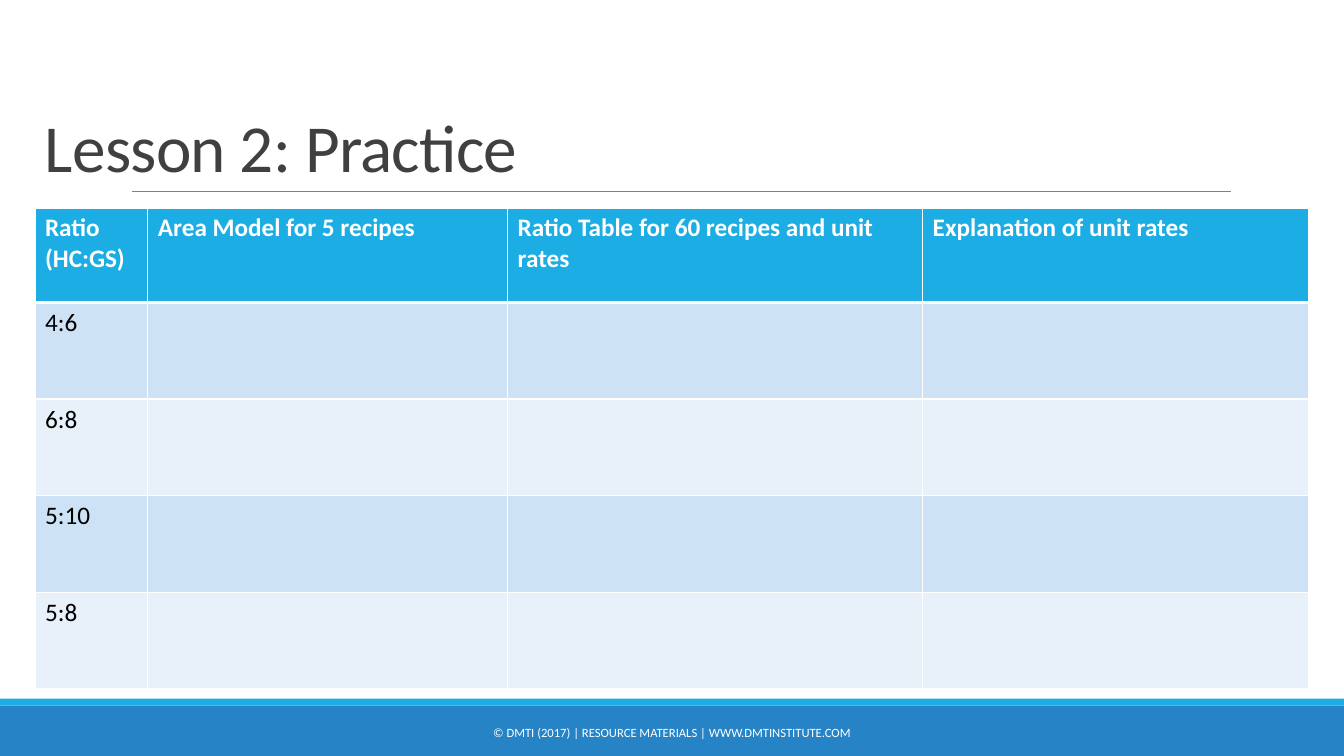
import pptx
import pptx.util
import pptx.dml.color
import pptx.enum.shapes
import pptx.enum.text
import pptx.oxml
import pptx.oxml.ns

Pt = pptx.util.Pt
Color = pptx.dml.color.RGBColor.from_string
Align = pptx.enum.text.PP_ALIGN
Anchor = pptx.enum.text.MSO_ANCHOR

theme = {
    "font": "Calibri",
    "title_size": 48, "table_size": 18, "footer_size": 9,
    "title": "404040", "text": "000000", "white": "FFFFFF", "rule": "808080",
    "blue": "2683C6", "cyan": "1CADE4",
    "bands": ["CDE3F5", "E8F1FA"],
}


def write(frame, text, size, color, bold=False, align=Align.LEFT,
          anchor=Anchor.TOP, line_spacing=None, tracking=None):
    frame.word_wrap = True
    frame.vertical_anchor = anchor
    for index, line in enumerate(text.split("\n")):
        para = frame.add_paragraph() if index else frame.paragraphs[0]
        para.alignment = align
        para.line_spacing = line_spacing
        span = para.add_run()
        span.text = line
        span.font.name = theme["font"]
        span.font.size = Pt(size)
        span.font.bold = bold
        span.font.color.rgb = Color(color)
        if tracking is not None:
            span.font._element.set("spc", str(tracking))


def add_borders(cell, widths):
    properties = cell._tc.get_or_add_tcPr()
    for position, (side, width) in enumerate(widths.items()):
        border = pptx.oxml.parse_xml(
            f'<a:ln{side} {pptx.oxml.ns.nsdecls("a")} w="{Pt(width)}">'
            f'<a:solidFill><a:srgbClr val="{theme["white"]}"/></a:solidFill></a:ln{side}>')
        properties.insert(position, border)


deck = pptx.Presentation()
deck.slide_width = Pt(960)
deck.slide_height = Pt(540)
page = deck.slides.add_slide(deck.slide_layouts[6])

for top, height, color in [(504, 36, theme["blue"]), (499, 5, theme["cyan"])]:
    bar = page.shapes.add_shape(pptx.enum.shapes.MSO_SHAPE.RECTANGLE,
                                Pt(0), Pt(top), Pt(960), Pt(height))
    bar.shadow.inherit = False
    bar.fill.solid()
    bar.fill.fore_color.rgb = Color(color)
    bar.line.fill.background()

rule = page.shapes.add_connector(pptx.enum.shapes.MSO_CONNECTOR.STRAIGHT,
                                 Pt(94.3), Pt(136.8), Pt(879), Pt(136.8))
rule.line.color.rgb = Color(theme["rule"])
rule.line.width = Pt(0.5)
rule._element.spPr.append(pptx.oxml.parse_xml(
    f'<a:effectLst {pptx.oxml.ns.nsdecls("a")}/>'))

title = page.shapes.add_textbox(Pt(25), Pt(22.3), Pt(853), Pt(114.5))
write(title.text_frame, "Lesson 2: Practice", theme["title_size"], theme["title"],
      anchor=Anchor.BOTTOM, line_spacing=0.85, tracking=-50)

footer = page.shapes.add_textbox(Pt(290.2), Pt(508.6), Pt(379.4), Pt(28.8))
write(footer.text_frame, "© DMTI (2017) | RESOURCE MATERIALS | WWW.DMTINSTITUTE.COM",
      theme["footer_size"], theme["white"], align=Align.CENTER, anchor=Anchor.MIDDLE)

rows = [
    ["Ratio\n(HC:GS)", "Area Model for 5 recipes",
     "Ratio Table for 60 recipes and unit rates", "Explanation of unit rates"],
    *[[ratio, "", "", ""] for ratio in ["4:6", "6:8", "5:10", "5:8"]],
]
column_widths = [80.6, 257, 296.5, 275.5]
row_heights = [67.5] + [69] * 4
table = page.shapes.add_table(len(rows), len(column_widths), Pt(25), Pt(148.5),
                              Pt(sum(column_widths)), Pt(sum(row_heights))).table
for column, width in zip(table.columns, column_widths):
    column.width = Pt(width)
for row_index, texts in enumerate(rows):
    table.rows[row_index].height = Pt(row_heights[row_index])
    header = row_index == 0
    fill = theme["cyan"] if header else theme["bands"][(row_index - 1) % 2]
    for column_index, text in enumerate(texts):
        cell = table.cell(row_index, column_index)
        cell.fill.solid()
        cell.fill.fore_color.rgb = Color(fill)
        add_borders(cell, {"L": 1, "R": 1, "T": 3 if row_index == 1 else 1,
                           "B": 3 if header else 1})
        if text:
            write(cell.text_frame, text, theme["table_size"],
                  theme["white"] if header else theme["text"], bold=header)

deck.save("out.pptx")
